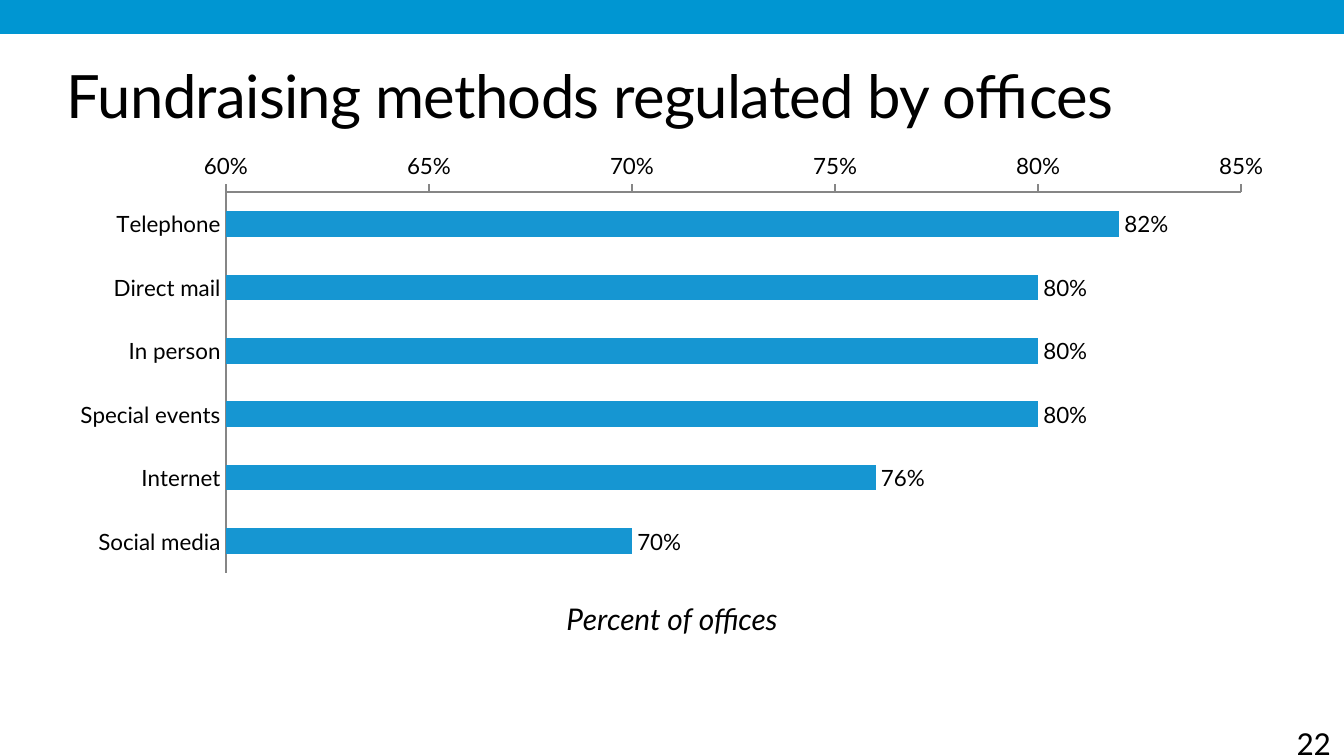
"""Build the slide on fundraising methods regulated by offices."""
import lxml.etree
import pptx
import pptx.chart.data
import pptx.dml.color
import pptx.enum.chart
import pptx.enum.shapes
import pptx.enum.text
import pptx.oxml.ns
import pptx.util

PX = 914400 / 134.4
qn = pptx.oxml.ns.qn


def color(value):
    return pptx.dml.color.RGBColor.from_string(value)


def set_layout(parent, index, settings):
    for old in parent.findall(qn("c:layout")):
        parent.remove(old)
    layout = lxml.etree.Element(qn("c:layout"))
    manual = lxml.etree.SubElement(layout, qn("c:manualLayout"))
    for tag, value in settings.items():
        lxml.etree.SubElement(manual, qn(f"c:{tag}")).set("val", str(value))
    parent.insert(index, layout)


deck = pptx.Presentation()
deck.slide_width, deck.slide_height = round(1344 * PX), round(756 * PX)
slide = deck.slides.add_slide(deck.slide_layouts[5])

banner = slide.shapes.add_shape(
    pptx.enum.shapes.MSO_SHAPE.RECTANGLE, 0, 0, deck.slide_width, round(34 * PX))
banner.shadow.inherit = False
banner.fill.solid()
banner.fill.fore_color.rgb = color("0096D2")
banner.line.fill.background()

heading = slide.shapes.title
heading.left, heading.top, heading.width, heading.height = [
    round(n * PX) for n in (67, 59, 1210, 63)]
heading.text_frame.text = "Fundraising methods regulated by offices"
heading_format = {
    "margin_left": 0, "margin_top": 0, "margin_right": 0, "margin_bottom": 0,
    "word_wrap": True, "auto_size": pptx.enum.text.MSO_AUTO_SIZE.NONE,
    "vertical_anchor": pptx.enum.text.MSO_ANCHOR.TOP}
for key, value in heading_format.items():
    setattr(heading.text_frame, key, value)
heading_line = heading.text_frame.paragraphs[0]
heading_line.alignment = pptx.enum.text.PP_ALIGN.LEFT
heading_line.runs[0].font._element.set("spc", "-40")

page_number = slide.shapes.add_textbox(*[round(n * PX) for n in (1210, 715, 134, 54)])
page_number.text_frame.word_wrap = True
page_number.text_frame.text = "22"
page_line = page_number.text_frame.paragraphs[0]
page_line.alignment = pptx.enum.text.PP_ALIGN.RIGHT

offices = pptx.chart.data.CategoryChartData(number_format="0%")
offices.categories = ["Telephone", "Direct mail", "In person",
                      "Special events", "Internet", "Social media"]
offices.add_series("Series 1", [0.82, 0.8, 0.8, 0.8, 0.76, 0.7])
chart = slide.shapes.add_chart(
    pptx.enum.chart.XL_CHART_TYPE.BAR_CLUSTERED,
    *[round(n * PX) for n in (56, 142, 1232, 512)], offices).chart
chart.has_legend = False
chart.has_title = False

bars = chart.plots[0]
bars.gap_width = 150
bars.vary_by_categories = False
bars.series[0].format.fill.solid()
bars.series[0].format.fill.fore_color.rgb = color("1696D2")
bars.has_data_labels = True
label_format = {
    "show_value": True, "number_format": "0%", "number_format_is_linked": False,
    "position": pptx.enum.chart.XL_LABEL_POSITION.OUTSIDE_END}
for key, value in label_format.items():
    setattr(bars.data_labels, key, value)

methods, percent = chart.category_axis, chart.value_axis
methods.reverse_order = True
methods.major_tick_mark = pptx.enum.chart.XL_TICK_MARK.NONE
percent_format = {
    "minimum_scale": 0.6, "maximum_scale": 0.85, "major_unit": 0.05,
    "has_major_gridlines": False,
    "major_tick_mark": pptx.enum.chart.XL_TICK_MARK.OUTSIDE}
for key, value in percent_format.items():
    setattr(percent, key, value)
percent.tick_labels.number_format = "0%"
percent.tick_labels.number_format_is_linked = False
for axis in (methods, percent):
    axis.format.line.color.rgb = color("868686")
    axis.format.line.width = pptx.util.Pt(0.75)

percent_title = percent.axis_title
percent_title.text_frame.text = "Percent of offices"
percent_title_font = percent_title.text_frame.paragraphs[0].runs[0].font
set_layout(percent_title._element, 1, {
    "xMode": "edge", "yMode": "edge", "x": 0.41, "y": 0.88})
set_layout(chart._chartSpace.chart.plotArea, 0, {
    "layoutTarget": "inner", "xMode": "edge", "yMode": "edge",
    "x": 0.138, "y": 0.098, "w": 0.824, "h": 0.744})

for font, name, size, bold, italic in [
        (heading_line.runs[0].font, "Lato", 32, False, False),
        (page_line.runs[0].font, "Calibri", 18, False, False),
        (chart.font, "Calibri", 10, False, False),
        (methods.tick_labels.font, "Lato", 12, False, False),
        (percent.tick_labels.font, "Lato", 12, False, False),
        (bars.data_labels.font, "Lato", 12, False, False),
        (percent_title_font, "Lato", 16, False, True)]:
    font_format = {"name": name, "size": pptx.util.Pt(size), "bold": bold, "italic": italic}
    for key, value in font_format.items():
        setattr(font, key, value)
    font.color.rgb = color("000000")

deck.save("out.pptx")
